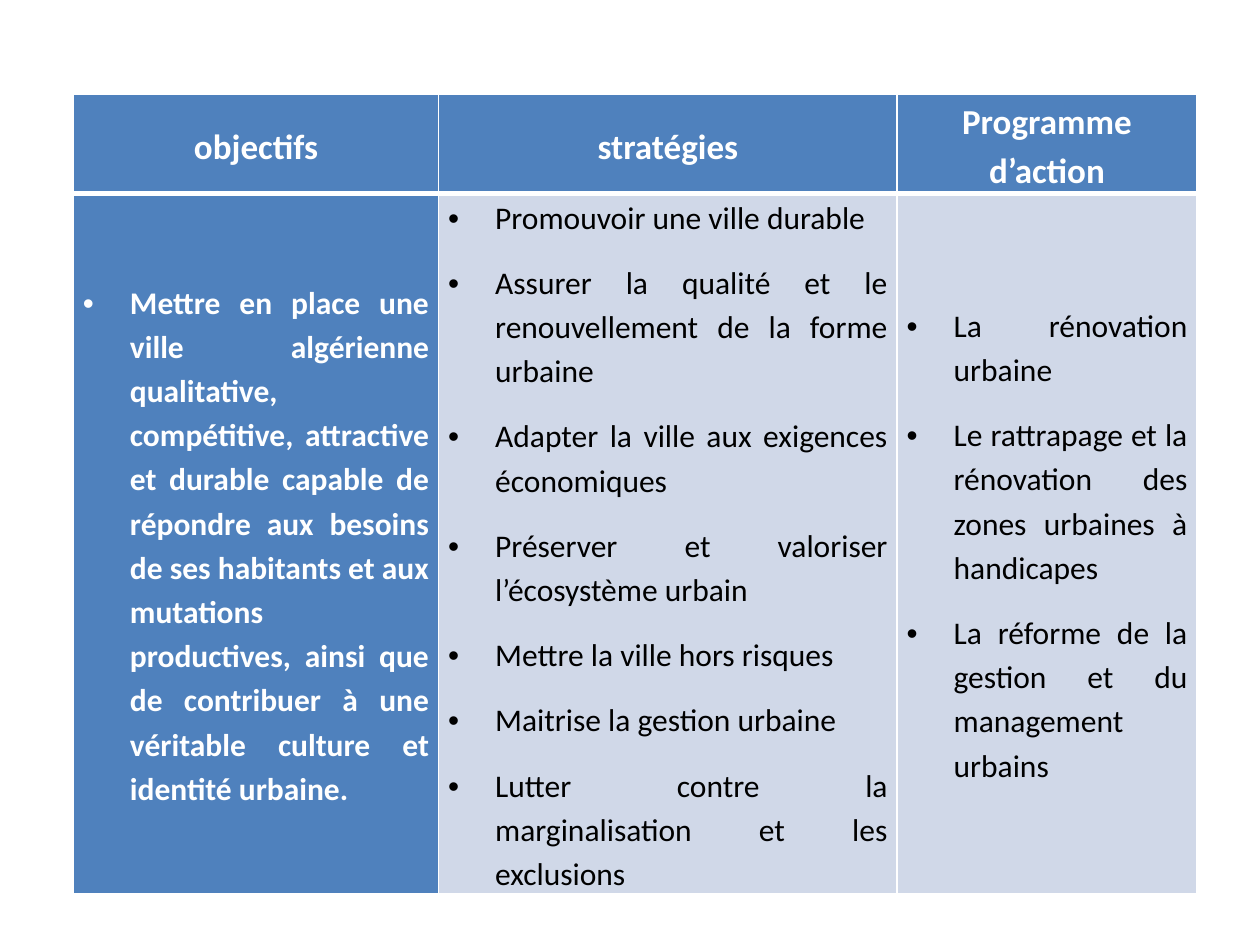
from lxml import etree
from pptx import Presentation
from pptx import util as u
from pptx.dml.color import RGBColor
from pptx.enum import text
from pptx.oxml.ns import qn

BLUE = RGBColor(0x4F, 0x81, 0xBD)
PALE = RGBColor(0xD0, 0xD8, 0xE8)
WHITE = RGBColor(0xFF, 0xFF, 0xFF)
BLACK = RGBColor(0, 0, 0)

COL_SHARES = (2.9, 3.64, 2.38)
ROW_HEIGHTS = (u.Cm(1.7), u.Cm(13.1))
HEADERS = ("objectifs", "stratégies", "Programme d’action")
BODY = (
    ("Mettre en place une ville algérienne qualitative, compétitive, attractive "
     "et durable capable de répondre aux besoins de ses habitants et aux mutations "
     "productives, ainsi que de contribuer à une véritable culture et identité urbaine.",),
    ("Promouvoir une ville durable",
     "Assurer la qualité et le renouvellement de la forme urbaine",
     "Adapter la ville aux exigences économiques",
     "Préserver et valoriser l’écosystème urbain",
     "Mettre la ville hors risques",
     "Maitrise la gestion urbaine",
     "Lutter contre la marginalisation et les exclusions"),
    ("La rénovation urbaine",
     "Le rattrapage et la rénovation des zones urbaines à handicapes",
     "La réforme de la gestion et du management urbains"),
)


def set_borders(cell, bottom):
    tcPr = cell._tc.get_or_add_tcPr()
    widths = {"a:lnL": 1, "a:lnR": 1, "a:lnT": 1, "a:lnB": bottom}
    for i, (tag, width) in enumerate(widths.items()):
        ln = etree.Element(qn(tag), w=str(u.Pt(width)))
        fill = etree.SubElement(ln, qn("a:solidFill"))
        etree.SubElement(fill, qn("a:srgbClr"), val=str(WHITE))
        tcPr.insert(i, ln)


def add_bullet(p):
    pPr = p._p.get_or_add_pPr()
    indent = u.Cm(0.95)
    pPr.set("marL", str(indent))
    pPr.set("indent", str(-indent))
    etree.SubElement(pPr, qn("a:buFont"), typeface="Arial")
    etree.SubElement(pPr, qn("a:buChar"), char="•")


def fill_cell(cell, lines, header, first_col):
    strong = header or first_col
    cell.fill.solid()
    cell.fill.fore_color.rgb = BLUE if strong else PALE
    set_borders(cell, 3 if header else 1)
    cell.vertical_anchor = text.MSO_ANCHOR.MIDDLE
    cell.margin_left = cell.margin_right = u.Cm(0.19)
    cell.margin_top = cell.margin_bottom = 0
    tf = cell.text_frame
    for i, line in enumerate(lines):
        p = tf.add_paragraph() if i else tf.paragraphs[0]
        p.line_spacing = 1.15
        if header:
            p.alignment = text.PP_ALIGN.CENTER
        else:
            p.alignment = text.PP_ALIGN.JUSTIFY
            p.space_before = u.Pt(12)
            add_bullet(p)
        r = p.add_run()
        r.text = line
        r.font.name = "Calibri"
        r.font.size = u.Pt(20 if header else 18)
        r.font.bold = strong
        r.font.color.rgb = WHITE if strong else BLACK


def add_strategy_table(s, left, top, width):
    table = s.shapes.add_table(2, len(HEADERS), left, top, width, sum(ROW_HEIGHTS)).table
    for col, share in zip(table.columns, COL_SHARES):
        col.width = int(width * share / sum(COL_SHARES))
    for row, height in zip(table.rows, ROW_HEIGHTS):
        row.height = height
    for c, (title, lines) in enumerate(zip(HEADERS, BODY)):
        fill_cell(table.cell(0, c), (title,), True, c == 0)
        fill_cell(table.cell(1, c), lines, False, c == 0)


def main():
    prs = Presentation()
    prs.slide_width, prs.slide_height = u.Cm(25.4), u.Cm(19.05)
    s = prs.slides.add_slide(prs.slide_layouts[6])
    add_strategy_table(s, u.Cm(1.48), u.Cm(1.91), u.Cm(22.65))
    prs.save("out.pptx")


if __name__ == "__main__":
    main()
